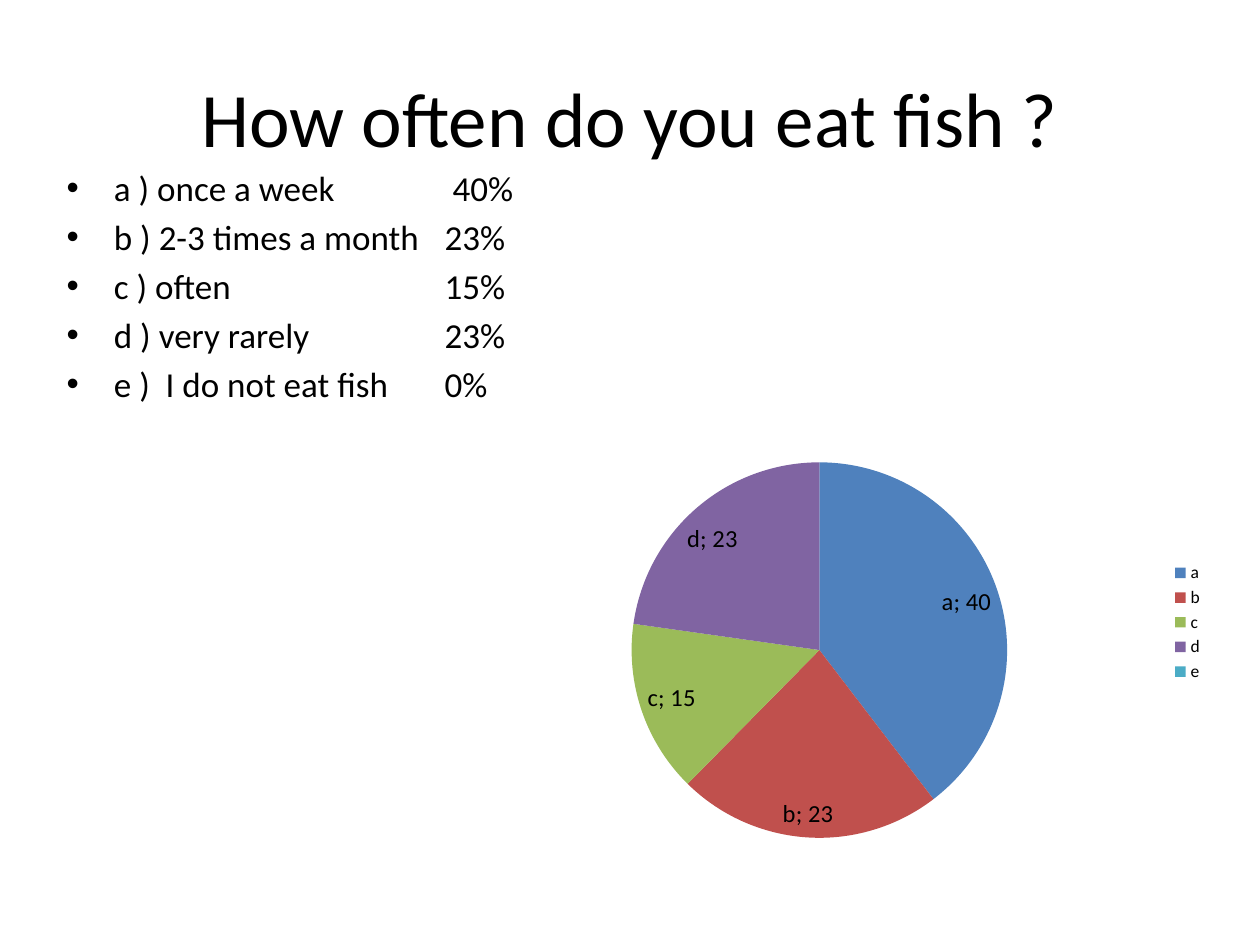
import pptx
import pptx.chart.data
import pptx.dml.color
import pptx.enum.chart
import pptx.oxml
import pptx.oxml.ns
import pptx.util

Cm = pptx.util.Cm
Pt = pptx.util.Pt
RGBColor = pptx.dml.color.RGBColor

BLACK = RGBColor(0x00, 0x00, 0x00)
BLUE = RGBColor(0x4F, 0x81, 0xBD)
RED = RGBColor(0xC0, 0x50, 0x4D)
GREEN = RGBColor(0x9B, 0xBB, 0x59)
PURPLE = RGBColor(0x80, 0x64, 0xA2)
TEAL = RGBColor(0x4B, 0xAC, 0xC6)
FONT = "Calibri"

TITLE = "How often do you eat fish ?"
ANSWERS = [
    "a ) once a week\t 40%",
    "b ) 2-3 times a month\t23%",
    "c ) often\t15%",
    "d ) very rarely\t23%",
    "e )  I do not eat fish\t0%",
]
# Answer, share in percent, slice colour
SLICES = [
    ("a", 40, BLUE),
    ("b", 23, RED),
    ("c", 15, GREEN),
    ("d", 23, PURPLE),
    ("e", 0, TEAL),
]
# Inner plot area as shares of the chart
PLOT = {"x": 0.16, "y": 0.1, "w": 0.54, "h": 0.9}


def place(shape, left, top, width, height):
    shape.left, shape.top = Cm(left), Cm(top)
    shape.width, shape.height = Cm(width), Cm(height)


def style(font, size):
    font.name = FONT
    font.size = Pt(size)
    font.color.rgb = BLACK


def add_node(parent, tag, **attrs):
    """Append one XML element with a prefixed tag to its parent."""
    prefix = tag.split(":")[0]
    child = pptx.oxml.parse_xml(f"<{tag} {pptx.oxml.ns.nsdecls(prefix)}/>")
    for name, value in attrs.items():
        child.set(name, str(value))
    parent.append(child)
    return child


def add_title(slide):
    title = slide.shapes.title
    place(title, 1.27, 0.76, 22.86, 3.18)
    title.text_frame.text = TITLE
    style(title.text_frame.paragraphs[0].runs[0].font, 44)


def add_list(slide):
    body = slide.placeholders[1]
    place(body, 1.09, 1.73, 22.86, 7.39)
    frame = body.text_frame
    frame.margin_top = Cm(1.63)  # the list starts below the title
    frame.text = "\n".join(ANSWERS)
    for para in frame.paragraphs:
        para.space_before = Pt(0)
        para.space_after = Pt(4)
        # One tab stop lines up the shares
        tabs = add_node(para._p.get_or_add_pPr(), "a:tabLst")
        add_node(tabs, "a:tab", pos=Cm(7.62), algn="l")
        for run in para.runs:
            style(run.font, 20)


def set_plot(chart):
    """Fix the inner plot area inside the chart."""
    area = chart._chartSpace.chart.plotArea
    for old in area.findall(pptx.oxml.ns.qn("c:layout")):
        area.remove(old)
    layout = add_node(area, "c:layout")
    area.insert(0, layout)  # the schema wants the layout first
    manual = add_node(layout, "c:manualLayout")
    add_node(manual, "c:layoutTarget", val="inner")
    for mode in ("xMode", "yMode"):
        add_node(manual, f"c:{mode}", val="edge")
    for side, share in PLOT.items():
        add_node(manual, f"c:{side}", val=share)


def set_labels(plot):
    """Label each slice with its answer and share."""
    labels = plot.data_labels
    labels.show_value = True
    labels.show_category_name = True
    labels.show_percentage = False
    labels.number_format = "0"
    labels.number_format_is_linked = False
    labels.position = pptx.enum.chart.XL_LABEL_POSITION.BEST_FIT
    style(labels.font, 14)
    root = labels._element
    mark = add_node(root, "c:separator")
    mark.text = "; "
    # The schema wants the separator right after the show flags
    flags = [item for item in root if "}show" in item.tag
             and not item.tag.endswith("showLeaderLines")]
    flags[-1].addnext(mark)
    # Empty slices carry no label
    for index, (_, share, _) in enumerate(SLICES):
        if share == 0:
            blank = add_node(root, "c:dLbl")
            root.insert(0, blank)
            add_node(blank, "c:idx", val=index)
            add_node(blank, "c:delete", val=1)


def add_pie(slide):
    names, shares, colors = zip(*SLICES)
    data = pptx.chart.data.CategoryChartData(number_format="0")
    data.categories = names
    data.add_series("Series 1", shares)
    chart = slide.shapes.add_chart(
        pptx.enum.chart.XL_CHART_TYPE.PIE,
        Cm(10.49), Cm(6.93), Cm(14.02), Cm(11.23), data,
    ).chart
    style(chart.font, 10)
    chart.has_title = False
    chart.has_legend = True
    chart.legend.position = pptx.enum.chart.XL_LEGEND_POSITION.RIGHT
    chart.legend.include_in_layout = False
    plot = chart.plots[0]
    plot.vary_by_categories = True
    plot.has_data_labels = True
    for index, color in enumerate(colors):
        fill = plot.series[0].points[index].format.fill
        fill.solid()
        fill.fore_color.rgb = color
    set_labels(plot)
    set_plot(chart)


def main():
    deck = pptx.Presentation()
    deck.slide_width, deck.slide_height = Cm(25.4), Cm(19.05)
    slide = deck.slides.add_slide(deck.slide_layouts[1])
    add_title(slide)
    add_list(slide)
    add_pie(slide)
    deck.save("out.pptx")


if __name__ == "__main__":
    main()
